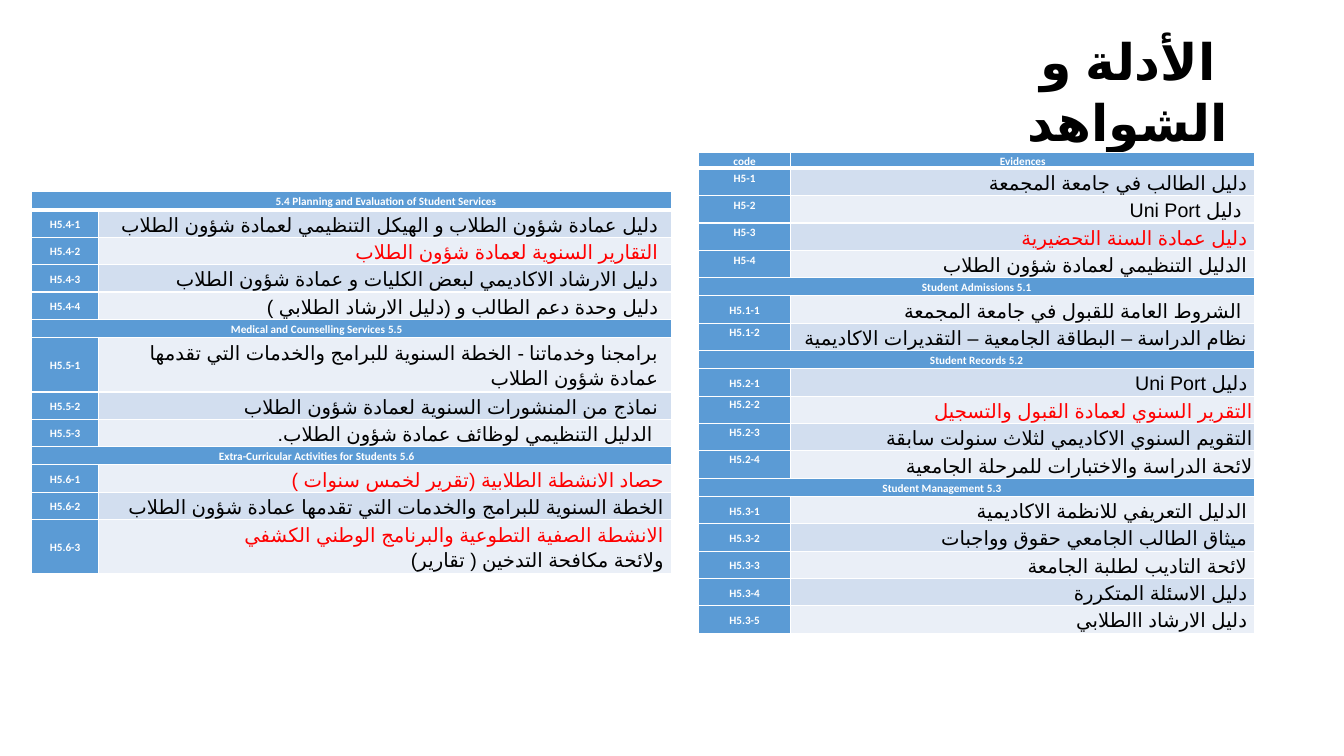
"""Build the slide of evidence tables for student services."""
from dataclasses import dataclass

from lxml.etree import SubElement
from pptx import Presentation
from pptx.dml.color import RGBColor
from pptx.enum.lang import MSO_LANGUAGE_ID as Language
from pptx.enum.text import MSO_ANCHOR as Anchor, PP_ALIGN as Align
from pptx.oxml import parse_xml
from pptx.oxml.ns import qn
from pptx.util import Cm, Pt

TITLE = "الأدلة و الشواهد"
EVIDENCES = [
    ("header", "code", "Evidences"),
    ("fixed", "H5-1", "دليل الطالب في جامعة المجمعة", 1),
    ("fixed", "H5-2", "دليل Uni Port", 2),
    ("fixed", "H5-3", "*دليل عمادة السنة التحضيرية", 1),
    ("fixed", "H5-4", "الدليل التنظيمي لعمادة شؤون الطلاب", 1),
    ("section", "5.1 Student Admissions", 0),
    ("middle", "H5.1-1", "الشروط العامة للقبول في جامعة المجمعة", 2),
    ("top", "H5.1-2", "نظام الدراسة – البطاقة الجامعية – التقديرات الاكاديمية", 1),
    ("section", "5.2 Student Records", 0),
    ("middle", "H5.2-1", "دليل Uni Port", 1),
    ("top", "H5.2-2", "*التقرير السنوي لعمادة القبول والتسجيل", 0),
    ("top", "H5.2-3", "التقويم السنوي الاكاديمي لثلاث سنولت سابقة", 0),
    ("top", "H5.2-4", "لائحة الدراسة والاختبارات للمرحلة الجامعية", 0),
    ("section", "5.3 Student Management", 1.75),
    ("middle", "H5.3-1", "الدليل التعريفي للانظمة الاكاديمية", 1),
    ("middle", "H5.3-2", "ميثاق الطالب الجامعي حقوق وواجبات", 1),
    ("middle", "H5.3-3", "لائحة التاديب لطلبة الجامعة", 1),
    ("middle", "H5.3-4", "دليل الاسئلة المتكررة", 1),
    ("middle", "H5.3-5", "دليل الارشاد االطلابي", 1),
]
SERVICES = [
    ("opening", "5.4 Planning and Evaluation of Student Services", 1.75),
    ("middle", "H5.4-1", "دليل عمادة شؤون الطلاب و الهيكل التنظيمي لعمادة شؤون الطلاب", 2),
    ("middle", "H5.4-2", "*التقارير السنوية لعمادة شؤون الطلاب", 2),
    ("middle", "H5.4-3", "دليل الارشاد الاكاديمي لبعض الكليات و عمادة شؤون الطلاب", 2),
    ("middle", "H5.4-4", "دليل وحدة دعم الطالب و (دليل الارشاد الطلابي )", 2),
    ("section", "5.5 Medical and Counselling Services", 1.75),
    ("double", "H5.5-1", "برامجنا وخدماتنا - الخطة السنوية للبرامج والخدمات التي تقدمها عمادة شؤون الطلاب", 2),
    ("middle", "H5.5-2", "نماذج من المنشورات السنوية لعمادة شؤون الطلاب", 2),
    ("middle", "H5.5-3", "الدليل التنظيمي لوظائف عمادة شؤون الطلاب.", 3),
    ("section", "5.6 Extra-Curricular Activities for Students", 1.75),
    ("middle", "H5.6-1", "*حصاد الانشطة الطلابية (تقرير لخمس سنوات )", 1),
    ("middle", "H5.6-2", "الخطة السنوية للبرامج والخدمات التي تقدمها عمادة شؤون الطلاب", 1),
    ("double", "H5.6-3", "*الانشطة الصفية التطوعية والبرنامج الوطني الكشفي\nولائحة مكافحة التدخين ( تقارير)", 1),
]
TABLES = [
    (EVIDENCES, Cm(17.6), Cm(3.84), (Cm(2.33), Cm(11.69))),
    (SERVICES, Cm(0.79), Cm(4.83), (Cm(1.7), Cm(14.43))),
]
HEIGHTS = {"header": Cm(0.4), "section": Cm(0.46), "opening": Cm(0.46), "double": Cm(1.37)}
ENTRY_HEIGHT = Cm(0.69)
INDENT_STEP = Cm(0.14)


@dataclass(frozen=True)
class Theme:
    """Colours, fonts and type sizes."""
    head: str = "5B9BD5"
    bands: tuple = ("EAEFF7", "D2DEEF")
    white: str = "FFFFFF"
    black: str = "000000"
    red: str = "FF0000"
    label_font: str = "Calibri"
    text_font: str = "Arial"
    label_size: int = 8
    text_size: int = 14
    title_size: int = 36


THEME = Theme()
LABEL = (THEME.label_font, THEME.label_size, True, Language.ENGLISH_US)
ENTRY = (THEME.text_font, THEME.text_size, False, Language.ARABIC)
HEADING = (THEME.text_font, THEME.title_size, True, Language.ARABIC)


def style(para, look, color, align, indent=0, rtl=True):
    """Set direction, indent, font and language of one paragraph."""
    name, size, bold, language = look
    para.alignment = align
    properties = para._p.get_or_add_pPr()
    properties.set("marL", str(int(indent)))
    properties.set("indent", "0")
    properties.set("rtl", str(int(rtl)))
    font = para.font
    font.name, font.size, font.bold = name, Pt(size), bold
    font.color.rgb = RGBColor.from_string(color)
    SubElement(font._rPr, qn("a:cs")).set("typeface", name)
    for span in para.runs:
        span.font.language_id = language


def dress(cell, fill, anchor, bottom):
    """Set fill, margins, anchor and borders of one cell."""
    cell.fill.solid()
    cell.fill.fore_color.rgb = RGBColor.from_string(fill)
    cell.margin_left = cell.margin_right = Cm(0.05)
    cell.margin_top = cell.margin_bottom = 0
    cell.vertical_anchor = anchor
    properties = cell._tc.get_or_add_tcPr()
    for place, (side, width) in enumerate((("L", 1), ("R", 1), ("T", 1), ("B", bottom))):
        properties.insert(place, parse_xml(
            f'<a:ln{side} xmlns:a="http://schemas.openxmlformats.org/drawingml/2006/main" '
            f'w="{Pt(width)}"><a:solidFill><a:srgbClr val="{THEME.white}"/></a:solidFill></a:ln{side}>'))


def write_label(cell, text, indent=0, rtl=True, spacing=1.15):
    """Write a white centred label."""
    para = cell.text_frame.paragraphs[0]
    para.text = text
    para.line_spacing = spacing
    style(para, LABEL, THEME.white, Align.CENTER, indent, rtl)


def write_entry(cell, text, steps):
    """Write the lines of an entry; a leading star marks red ones."""
    frame = cell.text_frame
    frame.text = text.replace("*", "")
    for para, line in zip(frame.paragraphs, text.split("\n")):
        para.line_spacing = 1.15
        color = THEME.red if line.startswith("*") else THEME.black
        style(para, ENTRY, color, Align.RIGHT, steps * INDENT_STEP)


def add_evidence_table(page, rows, left, top, widths):
    """Add one table of codes and evidences."""
    heights = [HEIGHTS.get(row[0], ENTRY_HEIGHT) for row in rows]
    table = page.shapes.add_table(len(rows), 2, left, top, sum(widths), sum(heights)).table
    table.first_row = table.horz_banding = False
    for column, width in zip(table.columns, widths):
        column.width = width
    for index, (kind, first, *rest) in enumerate(rows):
        table.rows[index].height = heights[index]
        code, entry = table.cell(index, 0), table.cell(index, 1)
        titled = kind in ("header", "section", "opening")
        bottom = 1 if index else 3
        anchor = Anchor.TOP if kind in ("fixed", "top") else Anchor.MIDDLE
        dress(code, THEME.head, anchor, bottom)
        dress(entry, THEME.head if titled else THEME.bands[index % 2], Anchor.MIDDLE, bottom)
        if kind in ("section", "opening"):
            code.merge(entry)
            write_label(code, first, Cm(rest[0]), kind == "section")
            continue
        write_label(code, first, spacing=Pt(12.2) if kind == "fixed" else 1.15)
        if titled:
            write_label(entry, rest[0])
        else:
            write_entry(entry, *rest)


def main():
    """Build and save the deck."""
    deck = Presentation()
    deck.slide_width, deck.slide_height = Cm(33.87), Cm(19.05)
    page = deck.slides.add_slide(deck.slide_layouts[6])
    box = page.shapes.add_textbox(Cm(23.6), Cm(0.64), Cm(9.65), Cm(1.8))
    box.text_frame.word_wrap = True
    para = box.text_frame.paragraphs[0]
    para.text = TITLE
    style(para, HEADING, THEME.black, Align.CENTER)
    for rows, left, top, widths in TABLES:
        add_evidence_table(page, rows, left, top, widths)
    deck.save("out.pptx")


if __name__ == "__main__":
    main()
